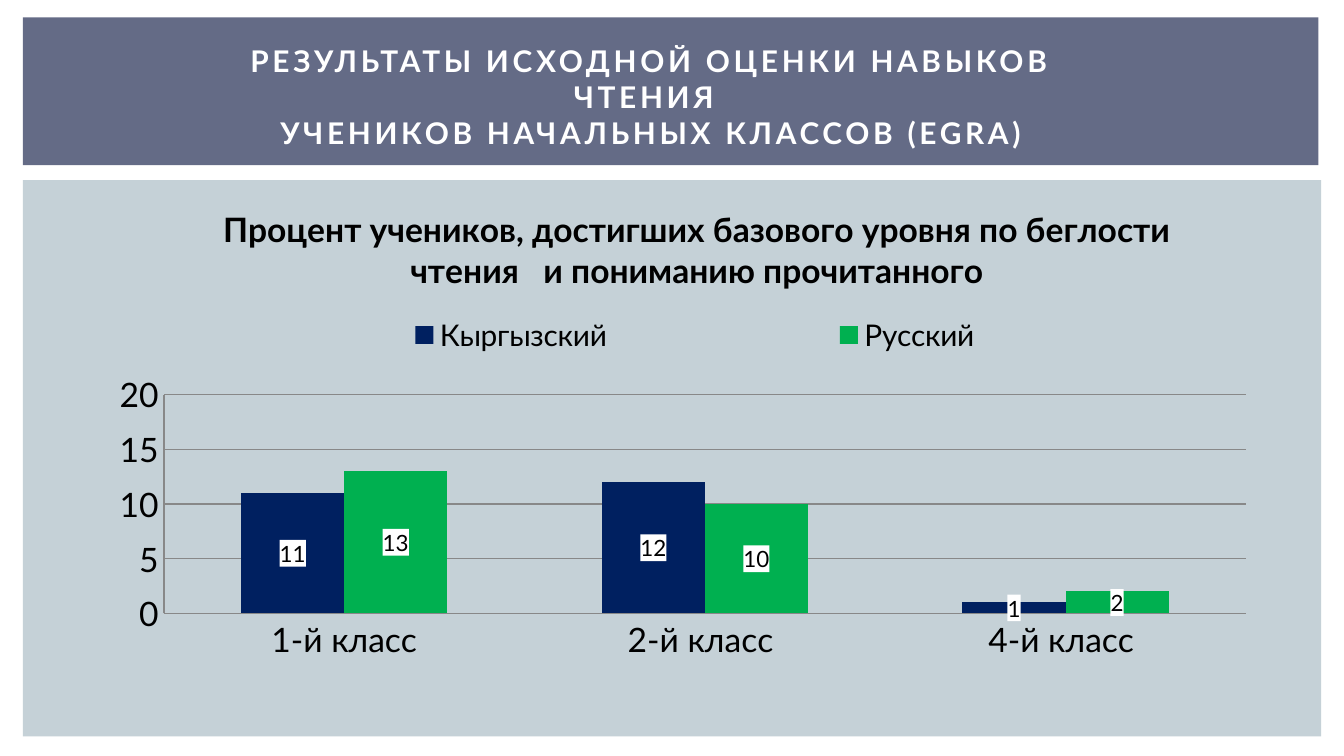
from lxml import etree
from pptx import Presentation
from pptx import util as u
from pptx.chart.data import CategoryChartData
from pptx.dml.color import RGBColor
from pptx.enum import chart as charts, shapes, text
from pptx.oxml import parse_xml
from pptx.oxml.ns import nsdecls, qn

CATEGORIES = ["1-й класс", "2-й класс ", "4-й класс "]
SERIES = {
    "Кыргызский": ([11, 12, 1], "002060"),
    "Русский ": ([13, 10, 2], "00B050"),
}
HEADING = "РЕЗУЛЬТАТЫ ИСХОДНОЙ ОЦЕНКИ НАВЫКОВ ЧТЕНИЯ \vУЧЕНИКОВ НАЧАЛЬНЫХ КЛАССОВ (EGRA)"
CHART_TITLE = (
    "Процент учеников, достигших базового уровня по беглости "
    "чтения   и пониманию прочитанного"
)


def colour(value):
    return RGBColor.from_string(value)


def apply(target, values):
    for name, value in values.items():
        setattr(target, name, value)


def set_layout(parent, after, places, inner=False):
    for old in parent.findall(qn("c:layout")):
        parent.remove(old)
    layout = parse_xml(f"<c:layout {nsdecls('c')}/>")
    manual = etree.SubElement(layout, qn("c:manualLayout"))
    settings = [("layoutTarget", "inner")] if inner else []
    settings += [("xMode", "edge"), ("yMode", "edge")]
    settings += zip("xywh", places)
    for name, value in settings:
        etree.SubElement(manual, qn(f"c:{name}")).set("val", str(value))
    if after is None:
        parent.insert(0, layout)
    else:
        parent.find(qn(after)).addnext(layout)


class SlideBuilder:
    font = "Lato"
    ink = "000000"
    grid = "888888"

    def __init__(self, page):
        self.page = page

    def style_font(self, font, size, bold=False, tint=None):
        apply(font, {"name": self.font, "size": u.Pt(size), "bold": bold})
        font.color.rgb = colour(tint or self.ink)

    def panel(self, place, fill):
        shape = self.page.shapes.add_shape(
            shapes.MSO_SHAPE.RECTANGLE, *map(u.Inches, place))
        shape.shadow.inherit = False
        shape.fill.solid()
        shape.fill.fore_color.rgb = colour(fill)
        shape.line.fill.background()

    def heading(self, place, words):
        box = self.page.shapes.add_textbox(*map(u.Inches, place))
        apply(box.text_frame, {
            "word_wrap": True,
            "vertical_anchor": text.MSO_ANCHOR.MIDDLE,
        })
        para = box.text_frame.paragraphs[0]
        para.text = words
        para.alignment = text.PP_ALIGN.CENTER
        for span in para.runs:
            self.style_font(span.font, 16, True, "FFFFFF")
            span._r.get_or_add_rPr().set("spc", "200")

    def column_chart(self, place, title):
        data = CategoryChartData(number_format="0")
        data.categories = CATEGORIES
        for name, (values, _) in SERIES.items():
            data.add_series(name, values)
        chart = self.page.shapes.add_chart(
            charts.XL_CHART_TYPE.COLUMN_CLUSTERED,
            *map(u.Inches, place), data).chart
        self.style_font(chart.font, 18)
        self.chart_title(chart, title)
        self.legend(chart)
        self.axes(chart)
        self.columns(chart.plots[0])
        set_layout(chart.element.xpath(".//c:plotArea")[0], None,
                   (0.087, 0.423, 0.876, 0.451), inner=True)

    def chart_title(self, chart, words):
        chart.has_title = True
        para = chart.chart_title.text_frame.paragraphs[0]
        span = para.add_run()
        span.text = words
        self.style_font(span.font, 18, True)
        set_layout(chart.element.xpath(".//c:title")[0], "c:tx", (0.13, 0.02))

    def legend(self, chart):
        chart.has_legend = True
        apply(chart.legend, {
            "position": charts.XL_LEGEND_POSITION.RIGHT,
            "include_in_layout": False,
        })
        self.style_font(chart.legend.font, 16)
        set_layout(chart.element.xpath(".//c:legend")[0], "c:legendPos",
                   (0.11, 0.25, 0.82, 0.1))

    def axes(self, chart):
        value_axis = chart.value_axis
        apply(value_axis, {
            "minimum_scale": 0, "maximum_scale": 20, "major_unit": 5,
            "has_major_gridlines": True,
        })
        apply(value_axis.tick_labels,
              {"number_format": "0", "number_format_is_linked": False})
        for axis in (chart.category_axis, value_axis):
            axis.major_tick_mark = charts.XL_TICK_MARK.NONE
            self.style_font(axis.tick_labels.font, 18)
        for owner in (chart.category_axis, value_axis, value_axis.major_gridlines):
            owner.format.line.color.rgb = colour(self.grid)
            owner.format.line.width = u.Pt(0.75)

    def columns(self, plot):
        apply(plot, {"gap_width": 150, "overlap": 0, "vary_by_categories": False})
        for series, (_, fill) in zip(plot.series, SERIES.values()):
            series.format.fill.solid()
            series.format.fill.fore_color.rgb = colour(fill)
            labels = series.data_labels
            apply(labels, {
                "show_value": True, "number_format": "0",
                "number_format_is_linked": False,
                "position": charts.XL_LABEL_POSITION.CENTER,
            })
            self.style_font(labels.font, 12)
            background = parse_xml(
                f"<c:spPr {nsdecls('c', 'a')}><a:solidFill>"
                '<a:srgbClr val="FFFFFF"/></a:solidFill></c:spPr>')
            labels._element.find(qn("c:txPr")).addprevious(background)


def main():
    deck = Presentation()
    apply(deck, {"slide_width": u.Inches(10), "slide_height": u.Inches(5.625)})
    builder = SlideBuilder(deck.slides.add_slide(deck.slide_layouts[6]))
    builder.panel((0.17, 1.34, 9.66, 4.14), "C5D1D7")
    builder.panel((0.17, 0.13, 9.64, 1.1), "646B86")
    builder.heading((1.54, 0.29, 6.61, 0.86), HEADING)
    builder.column_chart((0.42, 1.41, 9.19, 3.61), CHART_TITLE)
    deck.save("out.pptx")


if __name__ == "__main__":
    main()
